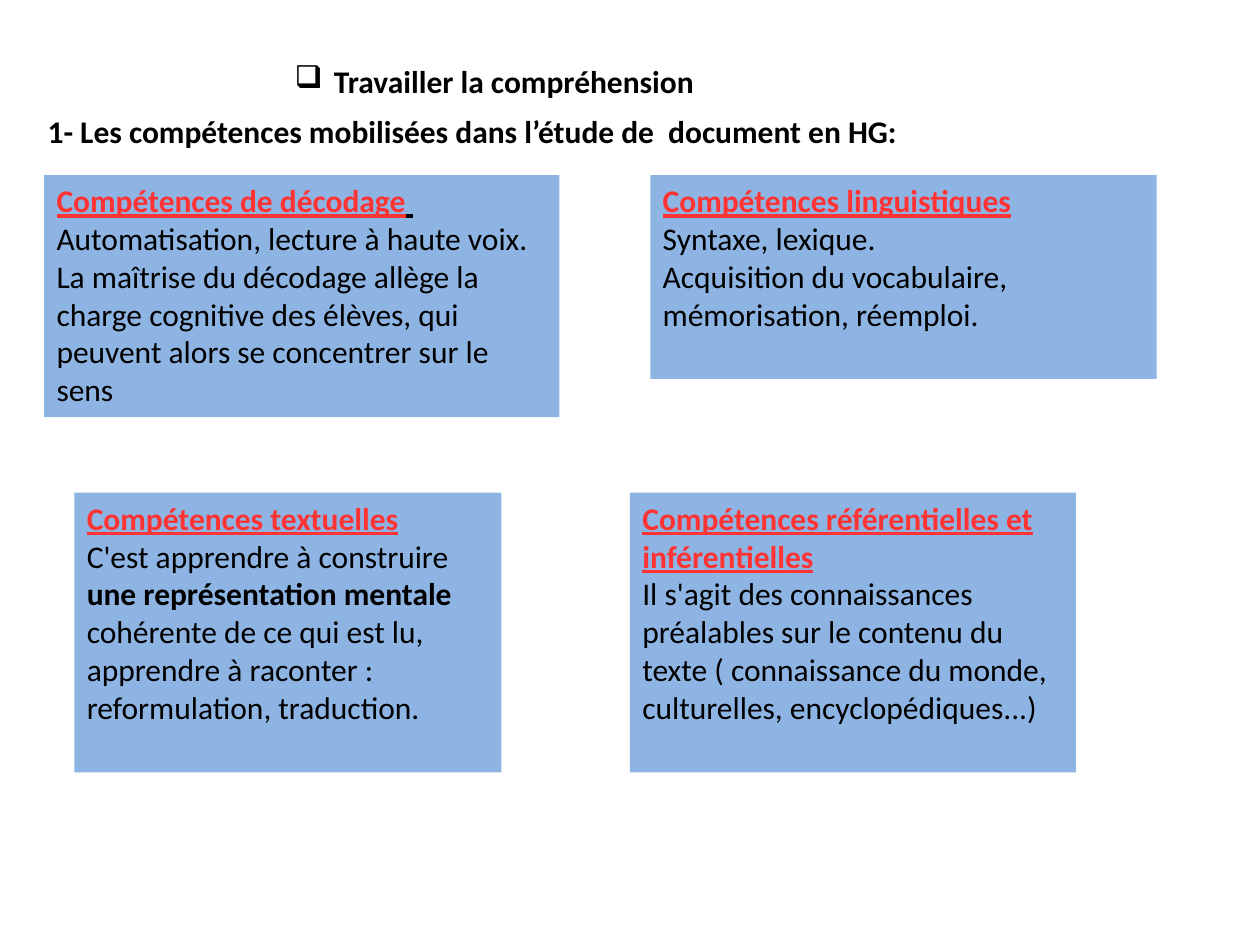
from lxml import etree
from pptx import Presentation
from pptx.dml.color import RGBColor
from pptx.enum import shapes, text
from pptx.oxml import ns
from pptx.util import Cm, Pt

BLACK = RGBColor(0x00, 0x00, 0x00)
RED = RGBColor(0xFF, 0x33, 0x33)
BLUE = RGBColor(0x8E, 0xB4, 0xE3)
FONT, SIZE = "Calibri", Pt(18)

# Content: headings as (text, left, top, width, bullet), lengths in cm
HEADINGS = [
    ("Travailler la compréhension", 5.69, 1.12, 11.99, "❑"),
    ("1- Les compétences mobilisées dans l’étude de  document en HG:",
     0.71, 2.13, 23.19, None),
]
HEADING_HEIGHT = 1.02

# Cards by row top: (left, width, height, title, title tail, paragraphs);
# a paragraph is a list of (text, bold)
CARD_ROWS = {
    3.53: [
        (0.89, 10.39, 4.88, "Compétences de décodage", " ", [
            [("Automatisation, lecture à haute voix.", False)],
            [("La maîtrise du décodage allège la charge cognitive des élèves, "
              "qui peuvent alors se concentrer sur le sens", False)],
        ]),
        (13.11, 10.21, 4.11, "Compétences linguistiques", "", [
            [("Syntaxe, lexique.", False)],
            [("Acquisition du vocabulaire, mémorisation, réemploi.", False)],
        ]),
    ],
    9.93: [
        (1.5, 8.61, 5.64, "Compétences textuelles", "", [
            [("C'est apprendre à construire ", False),
             ("une représentation mentale ", True),
             ("cohérente de ce qui est lu, apprendre à raconter : "
              "reformulation, traduction.", False)],
        ]),
        (12.7, 8.99, 5.64, "Compétences référentielles et inférentielles", "", [
            [("Il s'agit des connaissances préalables sur le contenu du texte "
              "( connaissance du monde, culturelles, encyclopédiques...)", False)],
        ]),
    ],
}


def style(paragraph, bold=None):
    paragraph.alignment = text.PP_ALIGN.LEFT
    font = paragraph.font
    font.name, font.size, font.bold = FONT, SIZE, bold
    font.color.rgb = BLACK


def add_run(paragraph, words, bold, color=BLACK, underline=False):
    run = paragraph.add_run()
    run.text = words
    run.font.name, run.font.size = FONT, SIZE
    run.font.bold, run.font.underline = bold, underline
    run.font.color.rgb = color


def add_bullet(paragraph, char, indent):
    props = paragraph._p.get_or_add_pPr()
    props.set("marL", str(indent))
    props.set("indent", str(-indent))
    bullet = etree.Element(ns.qn("a:buChar"), char=char)
    props.insert(0, bullet)


def add_heading(slide, words, left, top, width, bullet):
    heading = slide.shapes.add_textbox(
        Cm(left), Cm(top), Cm(width), Cm(HEADING_HEIGHT))
    heading.text_frame.word_wrap = True
    line = heading.text_frame.paragraphs[0]
    line.text = words
    style(line, bold=True)
    if bullet:
        add_bullet(line, bullet, Cm(0.79))


def add_card(slide, top, left, width, height, title, tail, paragraphs):
    card = slide.shapes.add_shape(
        shapes.MSO_SHAPE.RECTANGLE, Cm(left), Cm(top), Cm(width), Cm(height))
    card.shadow.inherit = False
    card.fill.solid()
    card.fill.fore_color.rgb = BLUE
    card.line.fill.background()
    frame = card.text_frame
    frame.word_wrap = True
    frame.vertical_anchor = text.MSO_ANCHOR.TOP

    # Underlined title, then the explanation
    heading = frame.paragraphs[0]
    style(heading)
    add_run(heading, title, True, RED, True)
    if tail:
        add_run(heading, tail, True, BLACK, True)
    for runs in paragraphs:
        body = frame.add_paragraph()
        style(body)
        for words, bold in runs:
            add_run(body, words, bold)


def main():
    prs = Presentation()
    prs.slide_width, prs.slide_height = Cm(25.4), Cm(19.05)
    slide = prs.slides.add_slide(prs.slide_layouts[6])
    for heading in HEADINGS:
        add_heading(slide, *heading)
    for top, cards in CARD_ROWS.items():
        for card in cards:
            add_card(slide, top, *card)
    prs.save("out.pptx")


if __name__ == "__main__":
    main()
